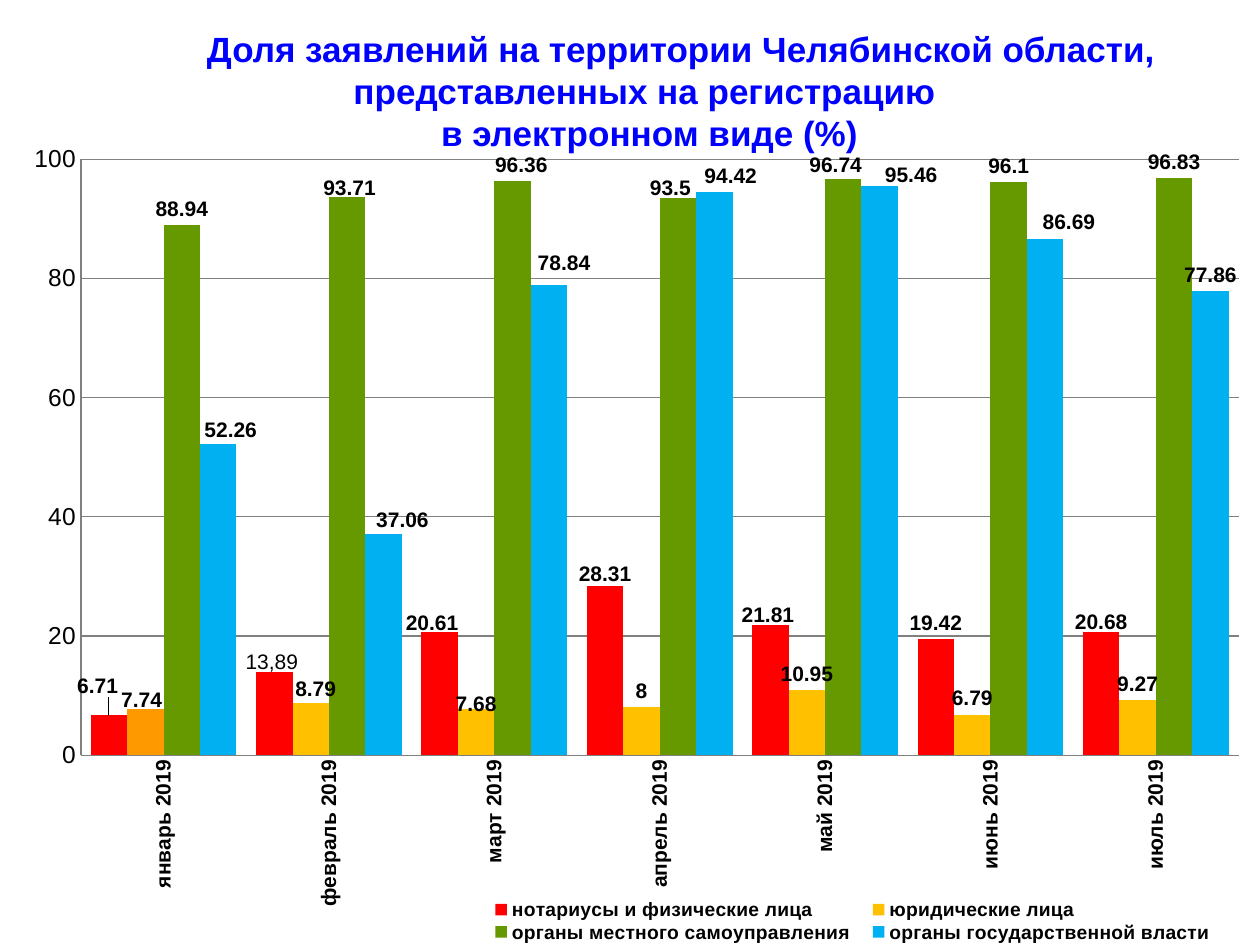
from lxml import etree
from pptx import Presentation
from pptx.chart.data import CategoryChartData
from pptx.dml.color import RGBColor
from pptx.enum.chart import XL_CHART_TYPE as CT, XL_LABEL_POSITION as LP
from pptx.enum.chart import XL_LEGEND_POSITION as LG, XL_TICK_MARK as TM
from pptx.enum.text import MSO_ANCHOR, PP_ALIGN
from pptx.oxml.ns import qn
from pptx.util import Inches, Pt

MONTHS = ["январь", "февраль", "март", "апрель", "май", "июнь", "июль"]
SERIES = [
    ("нотариусы и физические лица", "FF0000",
     [6.71, 13.98, 20.61, 28.31, 21.81, 19.42, 20.68]),
    ("юридические лица", "FFC000",
     [7.74, 8.79, 7.68, 8, 10.95, 6.79, 9.27]),
    ("органы местного самоуправления", "669900",
     [88.94, 93.71, 96.36, 93.5, 96.74, 96.1, 96.83]),
    ("органы государственной власти", "00B0F0",
     [52.26, 37.06, 78.84, 94.42, 95.46, 86.69, 77.86]),
]
LABEL_SHIFTS = [
    {0: (-0.09, -0.1), 1: (-0.02, 0.05), 2: (-0.06, 0.06), 3: (0, 0.03),
     4: (-0.02, 0.05), 6: (0, 0.05)},
    {0: (-0.03, 0.06), 1: (0.04, 0.02), 2: (0, 0.09)},
    {1: (0.02, 0.06), 2: (0.07, 0), 3: (-0.06, 0.05), 4: (-0.06, 0.02)},
    {0: (0.1, 0.02), 1: (0.15, 0.02), 2: (0.12, -0.05), 3: (0.13, 0),
     4: (0.25, 0.04), 5: (0.19, 0)},
]
CHART_W, CHART_H = 9.88, 6.35


def rgb(color):
    """Turn a hex string into a colour."""
    return RGBColor.from_string(color)


def manual_layout(**values):
    """Return a chart layout element with the given settings."""
    layout = etree.Element(qn("c:layout"))
    manual = etree.SubElement(layout, qn("c:manualLayout"))
    for tag, value in values.items():
        etree.SubElement(manual, qn(f"c:{tag}")).set("val", str(value))
    return layout


def place(parent, index, layout):
    """Put a layout into a chart part in place of its present one."""
    for old in parent.findall(qn("c:layout")):
        parent.remove(old)
    parent.insert(index, layout)


class Deck:
    """Holds the style and the current slide."""

    font_name = "Arial"

    def __init__(self):
        """Start a deck with one title-only slide."""
        self.prs = Presentation()
        self.prs.slide_width, self.prs.slide_height = Inches(10), Inches(7.5)
        self.s = self.prs.slides.add_slide(self.prs.slide_layouts[5])

    def style(self, font, size, bold=False, color="000000"):
        """Format a font."""
        font.name, font.size, font.bold = self.font_name, Pt(size), bold
        font.color.rgb = rgb(color)

    def title(self, lines, x, y, w, h):
        """Place the title and fill it line by line."""
        sp = self.s.shapes.title
        sp.left, sp.top, sp.width, sp.height = map(Inches, (x, y, w, h))
        tf = sp.text_frame
        tf.word_wrap, tf.vertical_anchor = True, MSO_ANCHOR.MIDDLE
        p = tf.paragraphs[0]
        p.alignment = PP_ALIGN.CENTER
        for i, line in enumerate(lines):
            if i:
                p.add_line_break()
            r = p.add_run()
            r.text = line
            self.style(r.font, 20, True, "0000FF")

    def chart(self, x, y, w, h):
        """Add the clustered column chart."""
        data = CategoryChartData()
        data.categories = [f"{month} 2019" for month in MONTHS]
        for name, _, values in SERIES:
            data.add_series(name, values)
        chart = self.s.shapes.add_chart(
            CT.COLUMN_CLUSTERED, *map(Inches, (x, y, w, h)), data).chart
        self.style(chart.font, 18)
        chart.has_title = False
        plot = chart.plots[0]
        plot.gap_width, plot.overlap, plot.vary_by_categories = 54, 0, False
        area = chart.element.find(".//" + qn("c:plotArea"))
        place(area, 0, manual_layout(
            layoutTarget="inner", xMode="edge", yMode="edge",
            x=0.065, y=0.018, w=0.93, h=0.745))
        self.axes(chart)
        self.legend(chart)
        for series, (_, color, _), shifts in zip(plot.series, SERIES, LABEL_SHIFTS):
            self.series(series, color, shifts)
        first = plot.series[1].points[0].format.fill
        first.solid()
        first.fore_color.rgb = rgb("FF9900")

    def axes(self, chart):
        """Format both axes and the gridlines."""
        cat, val = chart.category_axis, chart.value_axis
        val.minimum_scale, val.maximum_scale, val.major_unit = 0, 100, 20
        val.has_major_gridlines = True
        for axis, size, bold in ((cat, 12, True), (val, 14, False)):
            axis.major_tick_mark = axis.minor_tick_mark = TM.NONE
            self.style(axis.tick_labels.font, size, bold)
            axis.format.line.color.rgb = rgb("808080")
        val.major_gridlines.format.line.color.rgb = rgb("808080")
        body = cat._element.find(qn("c:txPr")).find(qn("a:bodyPr"))
        body.set("rot", "-5400000")
        body.set("vert", "horz")

    def legend(self, chart):
        """Add the two-column legend under the plot."""
        chart.has_legend = True
        legend = chart.legend
        legend.position, legend.include_in_layout = LG.RIGHT, False
        self.style(legend.font, 11, True)
        place(legend._element, 1, manual_layout(
            xMode="edge", yMode="edge", x=0.385, y=0.942, w=0.6, h=0.055))

    def series(self, series, color, shifts):
        """Colour a series and set its value labels."""
        series.invert_if_negative = False
        series.format.fill.solid()
        series.format.fill.fore_color.rgb = rgb(color)
        labels = series.data_labels
        labels.show_value, labels.position = True, LP.OUTSIDE_END
        self.style(labels.font, 12, True)
        for i, (dx, dy) in shifts.items():
            label = series.points[i].data_label
            if color == "FF0000" and i == 1:
                r = label.text_frame.paragraphs[0].add_run()
                r.text = "13,89"
                self.style(r.font, 12)
            else:
                self.style(label.font, 12, True)
            label.position = LP.OUTSIDE_END
            for item in series._element.iter(qn("c:dLbl")):
                if item.find(qn("c:idx")).get("val") == str(i):
                    place(item, 1, manual_layout(
                        x=round(dx / CHART_W, 4), y=round(dy / CHART_H, 4)))


def main():
    """Build the slide and save it."""
    deck = Deck()
    deck.title(["\tДоля заявлений на территории Челябинской области, "
                "представленных на регистрацию ",
                "в электронном виде (%)"], 0.31, 0.13, 9.69, 1.17)
    deck.chart(0, 1.15, CHART_W, CHART_H)
    deck.prs.save("out.pptx")


if __name__ == "__main__":
    main()
